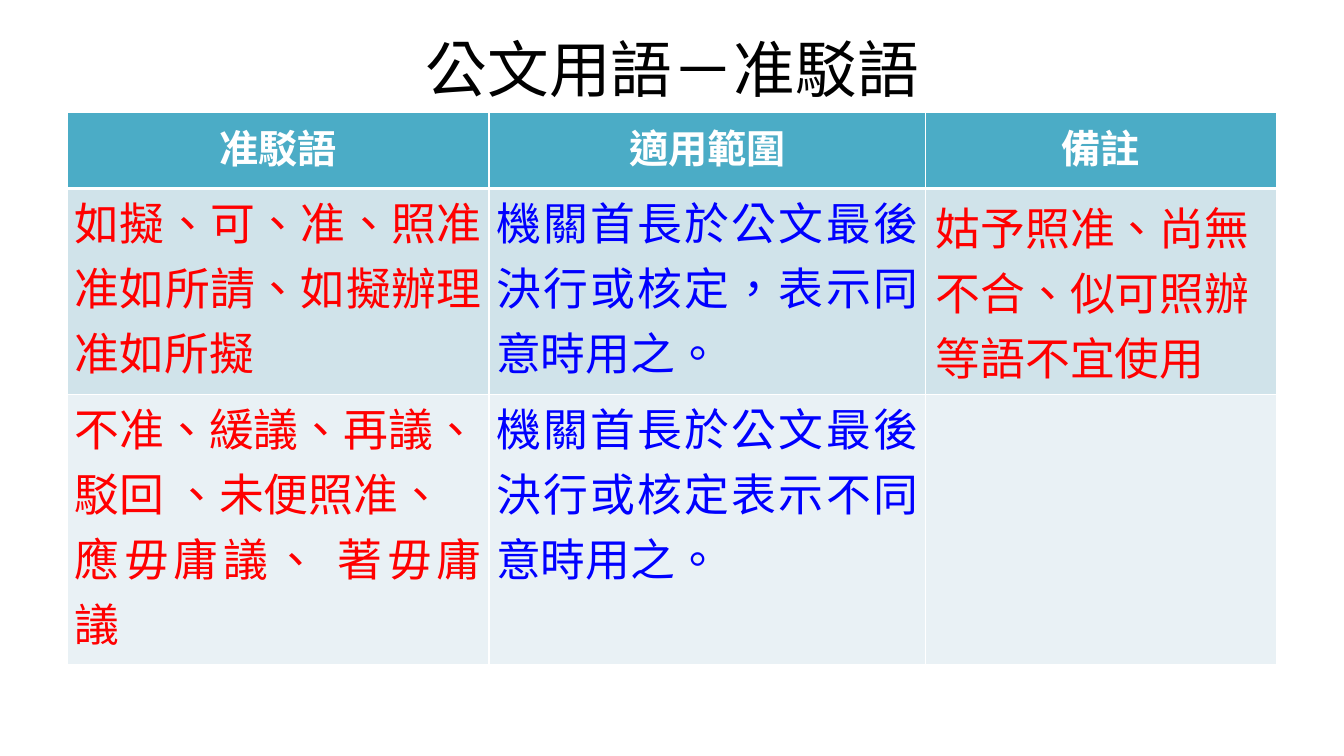
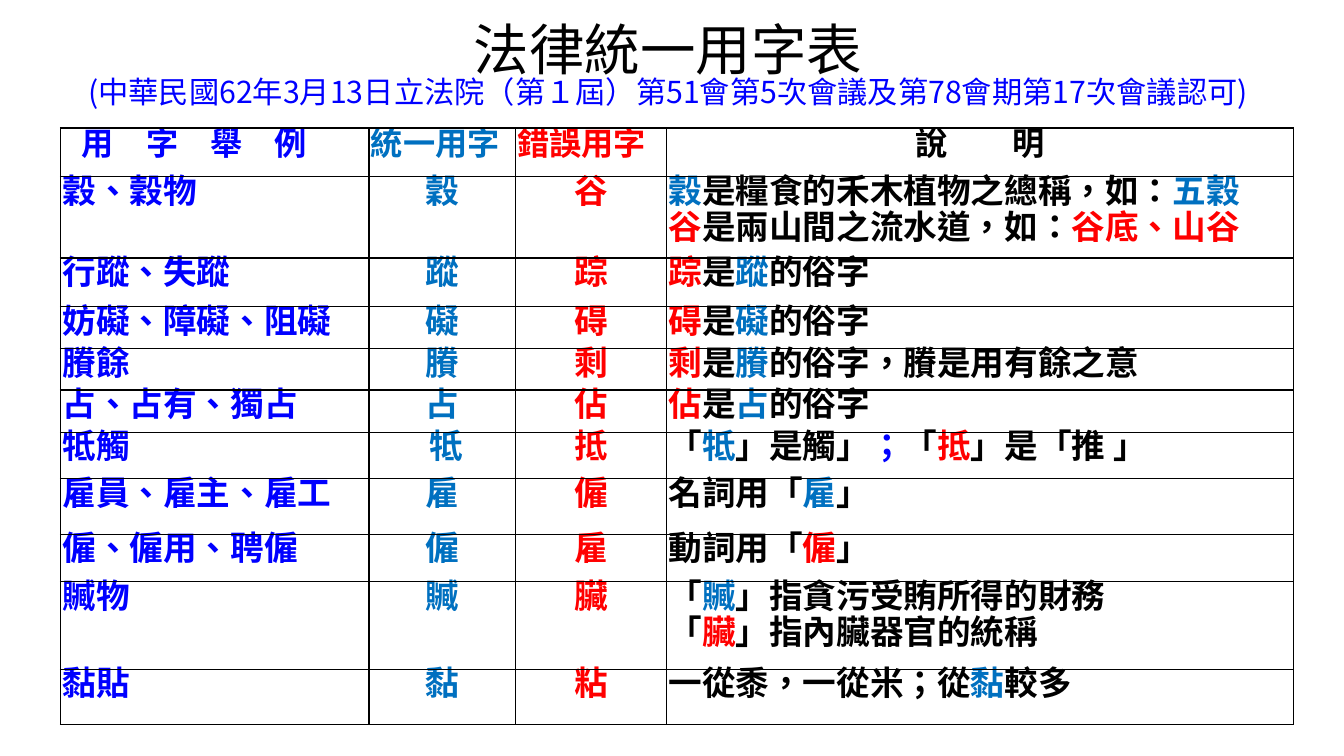
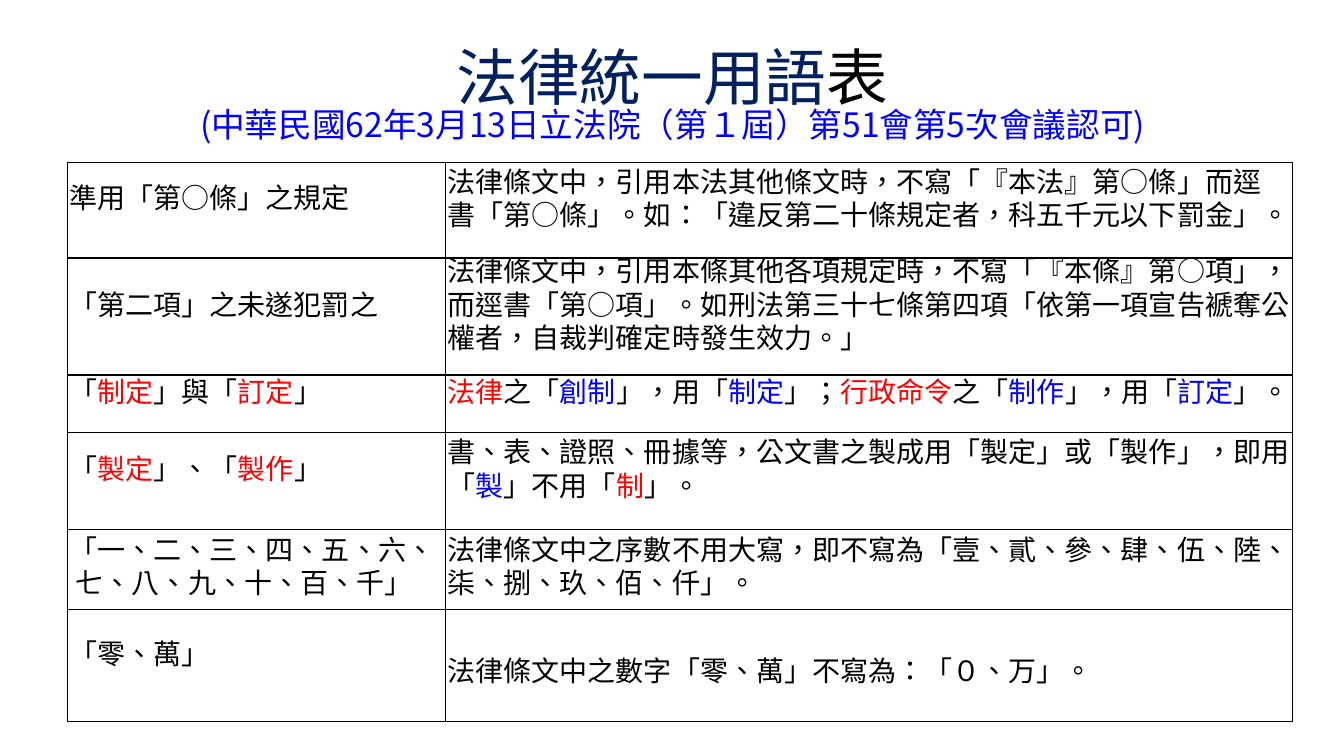
from pptx import Presentation
from pptx.dml.color import RGBColor
from pptx.enum.text import MSO_ANCHOR as Anchor, MSO_AUTO_SIZE as AutoSize, PP_ALIGN as Align
from pptx.oxml.ns import qn
from pptx.util import Emu, Pt
from lxml.etree import SubElement

# Shared lengths, colours and fonts
SCALE = 9144  # EMU per px, 100 px to the inch
BLACK = RGBColor(0x00, 0x00, 0x00)
WHITE = RGBColor(0xFF, 0xFF, 0xFF)
RED = RGBColor(0xFF, 0x00, 0x00)
BLUE = RGBColor(0x00, 0x00, 0xFF)
AZURE = RGBColor(0x00, 0x70, 0xC0)
NAVY = RGBColor(0x00, 0x20, 0x60)
TEAL = RGBColor(0x4B, 0xAC, 0xC6)
BAND_DARK = RGBColor(0xD0, 0xE3, 0xEA)
BAND_LIGHT = RGBColor(0xE9, 0xF1, 0xF5)
MARKS = {"r": RED, "b": BLUE, "a": AZURE, "k": BLACK}
SANS = "Noto Sans CJK SC"
CALIBRI = "Calibri"
TIMES = "Times New Roman"


def px(n):
    return Emu(n * SCALE)


def place(sp, box):
    sp.left, sp.top, sp.width, sp.height = map(px, box)


def write(p, text, size=20, font=SANS, color=BLACK, bold=False, align=None,
          spacing=None, before=None):
    """Add text to a paragraph; <r>, <b>, <a>, <k> switch colour, <> returns to the base."""
    if align is not None:
        p.alignment = align
    if spacing is not None:
        p.line_spacing = spacing
    if before is not None:
        p.space_before = before
    first, *marked = text.split("<")
    pieces = [("", first)] + [part.split(">", 1) for part in marked]
    for mark, words in pieces:
        if not words:
            continue
        r = p.add_run()
        r.text = words
        f = r.font
        f.size, f.name, f.bold = Pt(size), font, bold
        f.color.rgb = MARKS.get(mark, color)
        rPr = r._r.get_or_add_rPr()
        rPr.set("lang", "zh-TW")
        SubElement(rPr, qn("a:ea")).set("typeface", SANS)


def add_slide(prs, box, lines):
    """Title-only slide; each title line is a list of (text, size, colour)."""
    s = prs.slides.add_slide(prs.slide_layouts[5])
    title = s.shapes.title
    place(title, box)
    tf = title.text_frame
    tf.auto_size = AutoSize.NONE
    tf.vertical_anchor = Anchor.MIDDLE
    p = tf.paragraphs[0]
    if len(lines) > 1:
        p.line_spacing = 0.8
        tf.margin_top, tf.margin_bottom = px(11), 0
    for i, line in enumerate(lines):
        if i:
            p.add_line_break()
        for text, size, color in line:
            write(p, text, size=size, color=color, align=Align.CENTER)
    return s


def add_grid(s, left, top, cols, rows):
    """Plain table whose size follows from its columns and rows."""
    frame = s.shapes.add_table(len(rows), len(cols), px(left), px(top),
                               px(sum(cols)), px(sum(rows)))
    table = frame.table
    table.first_row = table.horz_banding = False
    for col, width in zip(table.columns, cols):
        col.width = px(width)
    for row, height in zip(table.rows, rows):
        row.height = px(height)
    return table


def style_cell(cell, margins, line, fill=None, anchor=Anchor.TOP, top=1, bottom=1):
    tcPr = cell._tc.get_or_add_tcPr()
    for tag, width in (("a:lnL", 1), ("a:lnR", 1), ("a:lnT", top), ("a:lnB", bottom)):
        ln = SubElement(tcPr, qn(tag), w=str(Pt(width)))
        SubElement(SubElement(ln, qn("a:solidFill")), qn("a:srgbClr"), val=str(line))
    if fill is None:
        cell.fill.background()
    else:
        cell.fill.solid()
        cell.fill.fore_color.rgb = fill
    cell.vertical_anchor = anchor
    (cell.margin_left, cell.margin_top,
     cell.margin_right, cell.margin_bottom) = map(px, margins)


def fill_cell(cell, lines, gap=None, **fmt):
    """One paragraph per line, with an optional gap between them."""
    tf = cell.text_frame
    for i, line in enumerate(lines):
        p = tf.add_paragraph() if i else tf.paragraphs[0]
        write(p, line, before=gap if i else None, **fmt)


# Approval terms: banded table
APPROVAL_HEAD = ["准駁語", "適用範圍", "備註"]
APPROVAL_ROWS = [
    [["如擬、可、准、照准、准如所請、如擬辦理、", "准如所擬"],
     ["機關首長於公文最後決行或核定，表示同意時用之。"],
     ["姑予照准、尚無不合、似可照辦等語不宜使用"]],
    [["不准、緩議、再議、", "駁回 、未便照准、", "應毋庸議、 著毋庸議"],
     ["機關首長於公文最後決行或核定表示不同意時用之。"],
     []],
]


def approval_table(s, left, top):
    table = add_grid(s, left, top, [418, 433, 348], [75, 204, 268])
    wide, tight = (10, 5, 10, 5), (7, 0, 7, 0)
    for c, head in enumerate(APPROVAL_HEAD):
        cell = table.cell(0, c)
        style_cell(cell, wide, WHITE, TEAL, bottom=3)
        fill_cell(cell, [head], size=28, font=CALIBRI, color=WHITE, bold=True,
                  align=Align.CENTER)
    formats = [(tight, CALIBRI, RED, Align.JUSTIFY),
               (tight, CALIBRI, BLUE, Align.JUSTIFY),
               (wide, SANS, RED, Align.LEFT)]
    for r, (row, band) in enumerate(zip(APPROVAL_ROWS, (BAND_DARK, BAND_LIGHT)), 1):
        for c, (lines, (margins, font, color, align)) in enumerate(zip(row, formats)):
            cell = table.cell(r, c)
            style_cell(cell, margins, WHITE, band, top=3 if r == 1 else 1)
            fill_cell(cell, lines, size=32, font=font, color=color, align=align)


# Unified characters: row height, examples, right form, wrong form, notes
CHARACTER_ROWS = [
    (48, "用　字　舉　例", "統一用字", "錯誤用字", ["說　　明"]),
    (81, "穀、穀物", "穀", "谷", ["<a>穀<>是糧食的禾木植物之總稱，如：<a>五穀",
                             "<r>谷<>是兩山間之流水道，如：<r>谷底、山谷"]),
    (48, "行蹤、失蹤", "蹤", "踪", ["<r>踪<>是<a>蹤<>的俗字"]),
    (42, "妨礙、障礙、阻礙", "礙", "碍", ["<r>碍<>是<a>礙<>的俗字"]),
    (41, "賸餘", "賸", "剩", ["<r>剩<>是<a>賸<>的俗字，賸是用有餘之意"]),
    (42, "占、占有、獨占", "占", "佔", ["<r>佔<>是<a>占<>的俗字"]),
    (46, "牴觸", " 牴", "抵", ["「<a>牴<>」是觸」<b>；<>「<r>抵<>」是「推 」"]),
    (55, "雇員、雇主、雇工", "雇", "僱", ["名詞用「<a>雇<>」"]),
    (47, "僱、僱用、聘僱", "僱", "雇", ["動詞用「<r>僱<>」"]),
    (87, "贓物", "贓", "臟", ["「<a>贓<>」指貪污受賄所得的財務",
                          "「<r>臟<>」指內臟器官的統稱"]),
    (55, "黏貼", "黏", "粘", ["一從黍，一從米；從<a>黏<>較多"]),
]


def character_table(s, left, top):
    table = add_grid(s, left, top, [306, 145, 150, 622], [row[0] for row in CHARACTER_ROWS])
    J, C = Align.JUSTIFY, Align.CENTER
    colors = (BLUE, AZURE, RED, BLACK)
    for r, (_, examples, right, wrong, notes) in enumerate(CHARACTER_ROWS):
        aligns = (J, C, C, J) if r else (J, J, J, C)
        columns = ([examples], [right], [wrong], notes)
        for c, (lines, color, align) in enumerate(zip(columns, colors, aligns)):
            # The first heading is indented
            indent = 0 if r or c else 19
            cell = table.cell(r, c)
            style_cell(cell, (2 + indent, 0, 2, 0), BLACK)
            fill_cell(cell, lines, size=24 if r else 23, font=TIMES, color=color,
                      bold=True, align=align, spacing=Pt(26))


# Unified wording: row height, term, rule, and extra top margin of both cells
WORDING_UPPER = [
    (95, ["準用「第○條」之規定"],
     ["法律條文中，引用本法其他條文時，不寫「『本法』第○條」而逕",
      "書「第○條」。如：「違反第二十條規定者，科五千元以下罰金」。"], (0, 0)),
    (116, ["「第二項」之未遂犯罰之"],
     ["法律條文中，引用本條其他各項規定時，不寫「『本條』第○項」，",
      "而逕書「第○項」。如刑法第三十七條第四項「依第一項宣告褫奪公",
      "權者，自裁判確定時發生效力。」"], (0, 0)),
    (57, ["「<r>制定<>」與「<r>訂定<>」"],
     ["<r>法律<>之「<b>創制<>」，用「<b>制定<>」；"
      "<r>行政命令<>之「<b>制作<>」，用「<b>訂定<>」。"], (0, 0)),
]
WORDING_LOWER = [
    (96, ["「<r>製定<>」、「<r>製作<>」"],
     ["書、表、證照、冊據等，公文書之製成用「製定」或「製作」，即用",
      "「<b>製<>」不用「<r>制<>」。"], (0, 0)),
    (80, ["「一、二、三、四、五、六、", " 七、八、九、十、百、千」"],
     ["法律條文中之序數不用大寫，即不寫為「壹、貳、參、肆、伍、陸、",
      "柒、捌、玖、佰、仟」。"], (17, 17)),
    (111, ["「零、萬」"],
     ["法律條文中之數字「零、萬」不寫為：「０、万」。"], (0, 33)),
]


def wording_table(s, left, top, rows):
    table = add_grid(s, left, top, [375, 840], [row[0] for row in rows])
    for r, (_, term, rule, extras) in enumerate(rows):
        for c, (lines, extra) in enumerate(zip((term, rule), extras)):
            cell = table.cell(r, c)
            style_cell(cell, (2, 4 + extra, 2, 7), BLACK, anchor=Anchor.MIDDLE)
            fill_cell(cell, lines, gap=Pt(12), align=Align.JUSTIFY, spacing=Pt(12))


def main():
    prs = Presentation()
    prs.slide_width, prs.slide_height = px(1333), px(750)

    s = add_slide(prs, (67, 22, 1200, 90), [[("公文用語－准駁語", 44, BLACK)]])
    approval_table(s, 67, 112)

    s = add_slide(prs, (15, 8, 1295, 109), [
        [("法律統一用字表", 39.6, BLACK)],
        [("(中華民國62年3月13日立法院（第１屆）第51會第5次會議及第78會期第17次會議認可)",
          21.6, BLUE)]])
    character_table(s, 60, 127)

    s = add_slide(prs, (67, 30, 1200, 125), [
        [("法律統一用語", 44, NAVY), ("表", 44, BLACK)],
        [("(中華民國62年3月13日立法院（第１屆）第51會第5次會議認可)", 24, BLUE)]])
    wording_table(s, 67, 161, WORDING_UPPER)
    wording_table(s, 67, 429, WORDING_LOWER)

    prs.save("out.pptx")


if __name__ == "__main__":
    main()
